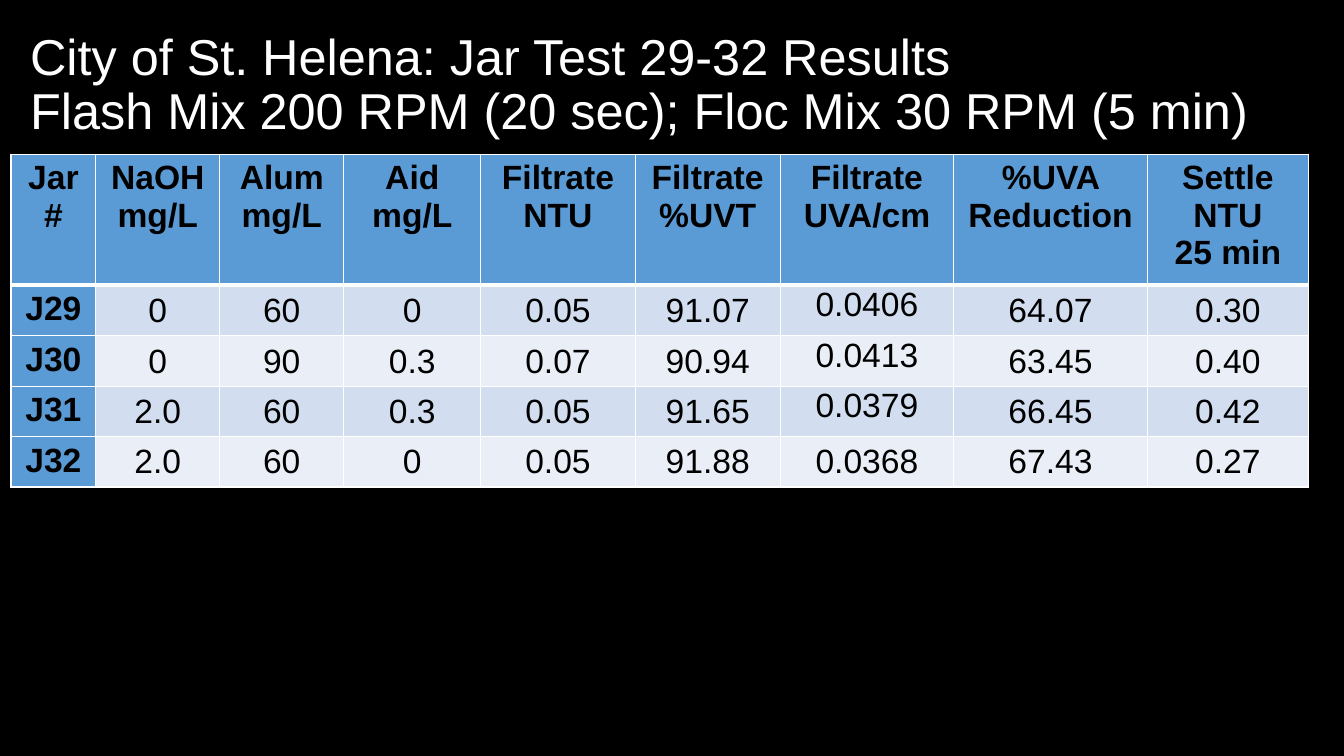
from pptx import Presentation
from pptx.dml.color import RGBColor
from pptx.enum.text import MSO_ANCHOR, PP_ALIGN
from pptx.oxml import parse_xml
from pptx.oxml.ns import nsdecls
from pptx.util import Inches, Pt

# Content
TITLE = ["City of St. Helena: Jar Test 29-32 Results",
         "Flash Mix 200 RPM (20 sec); Floc Mix 30 RPM (5 min)"]
HEADER = ["Jar\n#", "NaOH\nmg/L", "Alum\nmg/L", "Aid\nmg/L", "Filtrate\nNTU",
          "Filtrate\n%UVT", "Filtrate\nUVA/cm", "%UVA Reduction",
          "Settle\nNTU\n25 min"]
RESULTS = [
    ["J29", "0", "60", "0", "0.05", "91.07", "0.0406", "64.07", "0.30"],
    ["J30", "0", "90", "0.3", "0.07", "90.94", "0.0413", "63.45", "0.40"],
    ["J31", "2.0", "60", "0.3", "0.05", "91.65", "0.0379", "66.45", "0.42"],
    ["J32", "2.0", "60", "0", "0.05", "91.88", "0.0368", "67.43", "0.27"],
]

# Layout and style: rows grow from these heights to fit their text
COL_WIDTHS = [0.84, 1.23, 1.23, 1.36, 1.53, 1.44, 1.72, 1.92, 1.6]
HEADER_H, ROW_H, TABLE_H = 0.55, 0.41, 3.3
UVA_COL = HEADER.index("Filtrate\nUVA/cm")
BLACK = RGBColor(0x00, 0x00, 0x00)
WHITE = RGBColor(0xFF, 0xFF, 0xFF)
BLUE = RGBColor(0x5B, 0x9B, 0xD5)
BANDS = [RGBColor(0xD2, 0xDE, 0xEF), RGBColor(0xEA, 0xEF, 0xF7)]
VALUE_MARGINS = {"margin_left": Inches(0.01), "margin_right": Inches(0.01),
                 "margin_top": Inches(0.01), "margin_bottom": 0}


def set_font(p, color, **formats):
    for r in p.runs:
        r.font.color.rgb = color
        for name, value in {"name": "Arial", **formats}.items():
            setattr(r.font, name, value)


def set_borders(cell, **widths):
    for side in "LRTB":
        cell._tc.get_or_add_tcPr().append(parse_xml(
            f'<a:ln{side} {nsdecls("a")} w="{Pt(widths.get(side, 1))}">'
            f'<a:solidFill><a:srgbClr val="{WHITE}"/></a:solidFill></a:ln{side}>'))


prs = Presentation()
prs.slide_width, prs.slide_height = Inches(13.33), Inches(7.5)
s = prs.slides.add_slide(prs.slide_layouts[6])
s.background.fill.solid()
s.background.fill.fore_color.rgb = BLACK

# Title
tf = s.shapes.add_textbox(Inches(0.2), Inches(0.13), Inches(13.02), Inches(1.45)).text_frame
tf.word_wrap = True
tf.vertical_anchor = MSO_ANCHOR.MIDDLE
p = tf.paragraphs[0]
p.line_spacing = 0.9
p.add_run().text = TITLE[0]
p.add_line_break()
p.add_run().text = TITLE[1]
set_font(p, WHITE, size=Pt(36))

# Results table
rows = [HEADER] + RESULTS
heights = [HEADER_H] + [ROW_H] * len(RESULTS)
frame = s.shapes.add_table(len(rows), len(HEADER), Inches(0.11), Inches(1.53),
                           Inches(sum(COL_WIDTHS)), Inches(TABLE_H))
table = frame.table
table.first_col = True
for column, width in zip(table.columns, COL_WIDTHS):
    column.width = Inches(width)

for i, (values, height) in enumerate(zip(rows, heights)):
    table.rows[i].height = Inches(height)
    for j, value in enumerate(values):
        cell = table.cell(i, j)
        heading = i == 0 or j == 0
        set_borders(cell, T=3 if i == 1 else 1, B=3 if i == 0 else 1)
        cell.fill.solid()
        cell.fill.fore_color.rgb = BLUE if heading else BANDS[(i - 1) % 2]
        cell.text = value
        for p in cell.text_frame.paragraphs:
            p.alignment = PP_ALIGN.CENTER
            set_font(p, BLACK, size=Pt(24), bold=heading)
        if not heading:
            for name, margin in VALUE_MARGINS.items():
                setattr(cell, name, margin)
            # UVA values sit at the top, except in the last row
            top = j == UVA_COL and i < len(RESULTS)
            cell.vertical_anchor = MSO_ANCHOR.TOP if top else MSO_ANCHOR.MIDDLE

# Setting row heights resizes the frame
frame.height = Inches(TABLE_H)

prs.save("out.pptx")
